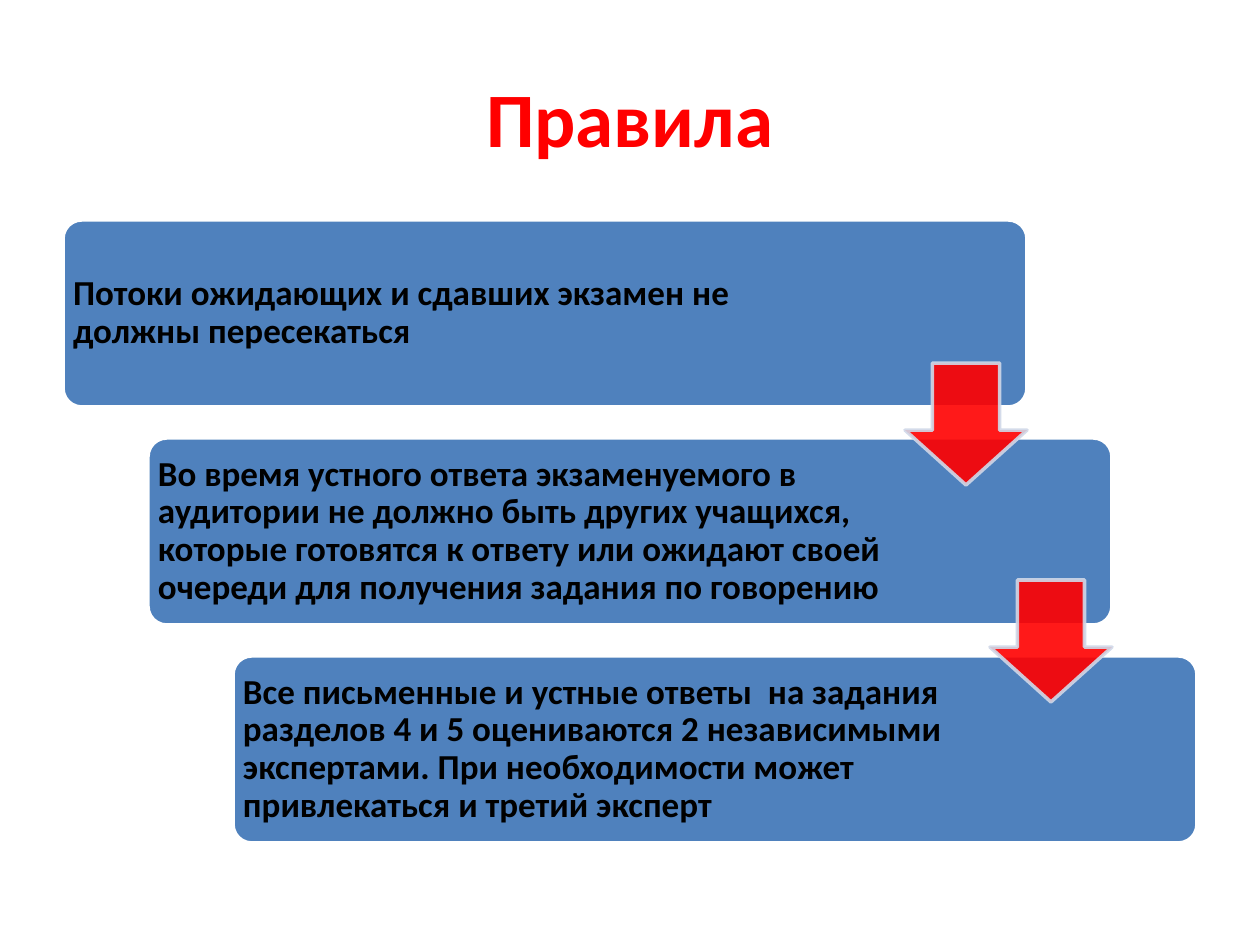
from typing import NamedTuple

from lxml.etree import SubElement
from pptx import Presentation
from pptx.dml.color import RGBColor
from pptx.enum.shapes import MSO_SHAPE
from pptx.enum.text import MSO_ANCHOR, PP_ALIGN
from pptx.oxml.ns import qn
from pptx.util import Emu, Pt

PIXELS_PER_INCH = 126
COLORS = {
    "title": "FF0000",
    "text": "000000",
    "step": "4F81BD",
    "step_line": "FFFFFF",
    "arrow": "FF0000",
    "arrow_line": "D0D8E8",
}
FONT = "Calibri"
STEP_LEFT, STEP_TOP, STEP_WIDTH, STEP_HEIGHT = 63, 220, 964, 187
SHIFT_X, SHIFT_Y = 85, 218
ARROW_LEFT, ARROW_TOP, ARROW_SIZE = 905, 363, 122
ARROW_SHIFT_Y = 217
TEXT_INSET = 10


class Step(NamedTuple):
    text: str
    text_width: int


STEPS = [
    Step("Потоки ожидающих и сдавших экзамен не должны пересекаться", 772),
    Step(
        "Во время устного ответа экзаменуемого в аудитории не должно быть "
        "других учащихся, которые готовятся к ответу или ожидают своей "
        "очереди для получения задания по говорению",
        757,
    ),
    Step(
        "Все письменные и устные ответы  на задания разделов 4 и 5 "
        "оцениваются 2 независимыми экспертами. При необходимости может "
        "привлекаться и третий эксперт",
        757,
    ),
]


def px(length: int) -> Emu:
    return Emu(round(length * 914400 / PIXELS_PER_INCH))


def box(left: int, top: int, width: int, height: int) -> tuple[Emu, ...]:
    return px(left), px(top), px(width), px(height)


def color(name: str) -> RGBColor:
    return RGBColor.from_string(COLORS[name])


def set_font(paragraph, size: int, color_name: str) -> None:
    font = paragraph.font
    font.name = FONT
    font.size = Pt(size)
    font.bold = True
    font.color.rgb = color(color_name)


def style_shape(shape, name: str, adjustments: list[float]) -> None:
    """Apply the fill, 2 pt outline and adjustments of a step or an arrow."""
    shape.shadow.inherit = False
    shape.fill.solid()
    shape.fill.fore_color.rgb = color(name)
    shape.line.color.rgb = color(f"{name}_line")
    shape.line.width = Pt(2)
    for index, value in enumerate(adjustments):
        shape.adjustments[index] = value


def set_opacity(shape, percent: int) -> None:
    for color_element in shape._element.spPr.iter(qn("a:srgbClr")):
        SubElement(color_element, qn("a:alpha")).set("val", str(percent * 1000))


def add_title(slide, text: str) -> None:
    title = slide.shapes.title
    title.left, title.top, title.width, title.height = box(63, 38, 1134, 157)
    title.text_frame.text = text
    title.text_frame.vertical_anchor = MSO_ANCHOR.MIDDLE
    paragraph = title.text_frame.paragraphs[0]
    paragraph.alignment = PP_ALIGN.CENTER
    set_font(paragraph, 44, "title")


def add_step(slide, step: Step, index: int) -> None:
    left, top = STEP_LEFT + index * SHIFT_X, STEP_TOP + index * SHIFT_Y
    panel = slide.shapes.add_shape(
        MSO_SHAPE.ROUNDED_RECTANGLE, *box(left, top, STEP_WIDTH, STEP_HEIGHT)
    )
    style_shape(panel, "step", [0.1])

    frame = slide.shapes.add_textbox(
        *box(left, top, step.text_width, STEP_HEIGHT)
    ).text_frame
    frame.word_wrap = True
    frame.vertical_anchor = MSO_ANCHOR.MIDDLE
    frame.margin_left = frame.margin_right = px(TEXT_INSET)
    frame.margin_top = frame.margin_bottom = px(TEXT_INSET)
    frame.text = step.text
    paragraph = frame.paragraphs[0]
    paragraph.line_spacing = 0.9
    set_font(paragraph, 20, "text")


def add_arrow(slide, index: int) -> None:
    left, top = ARROW_LEFT + index * SHIFT_X, ARROW_TOP + index * ARROW_SHIFT_Y
    arrow = slide.shapes.add_shape(
        MSO_SHAPE.DOWN_ARROW, *box(left, top, ARROW_SIZE, ARROW_SIZE)
    )
    style_shape(arrow, "arrow", [0.55, 0.45])
    set_opacity(arrow, 90)


def main() -> None:
    presentation = Presentation()
    presentation.slide_width, presentation.slide_height = px(1260), px(945)
    slide = presentation.slides.add_slide(presentation.slide_layouts[5])
    add_title(slide, "Правила")
    for index, step in enumerate(STEPS):
        add_step(slide, step, index)
    for index in range(len(STEPS) - 1):
        add_arrow(slide, index)
    presentation.save("out.pptx")


if __name__ == "__main__":
    main()
